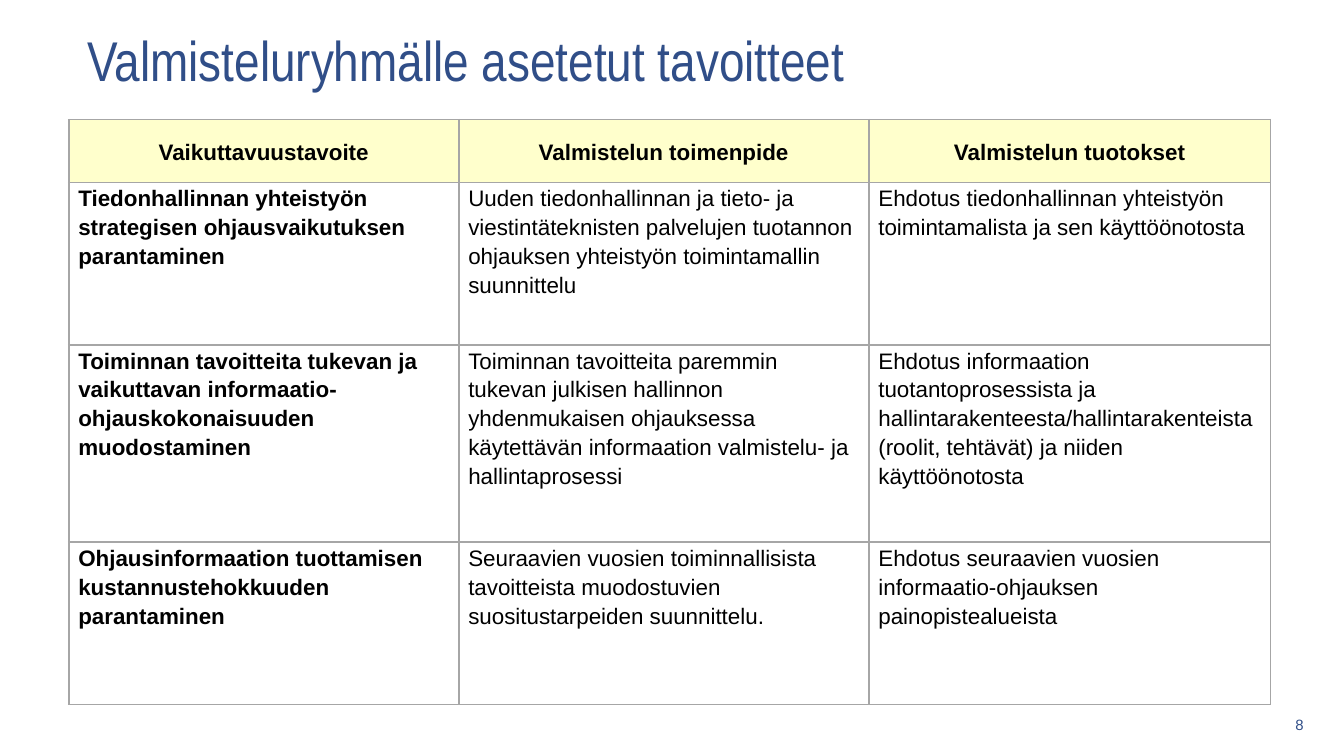
from lxml import etree
from pptx import Presentation
from pptx.dml.color import RGBColor
from pptx.enum.text import MSO_ANCHOR, MSO_AUTO_SIZE, PP_ALIGN
from pptx.oxml.ns import qn
from pptx.util import Cm, Pt

MIDDLE, TOP = MSO_ANCHOR.MIDDLE, MSO_ANCHOR.TOP
LEFT, CENTER, RIGHT = PP_ALIGN.LEFT, PP_ALIGN.CENTER, PP_ALIGN.RIGHT
NO_AUTOFIT = MSO_AUTO_SIZE.NONE
TITLE_ONLY = 5

# Content
TITLE = "Valmisteluryhmälle asetetut tavoitteet"
PAGE_NUMBER = "8"
GOALS = [
    ("Vaikuttavuustavoite", "Valmistelun toimenpide", "Valmistelun tuotokset"),
    ("Tiedonhallinnan yhteistyön strategisen ohjausvaikutuksen parantaminen",
     "Uuden tiedonhallinnan ja tieto- ja viestintäteknisten palvelujen "
     "tuotannon ohjauksen yhteistyön toimintamallin suunnittelu",
     "Ehdotus tiedonhallinnan yhteistyön toimintamalista ja sen käyttöönotosta"),
    ("Toiminnan tavoitteita tukevan ja vaikuttavan "
     "informaatio-ohjauskokonaisuuden muodostaminen",
     "Toiminnan tavoitteita paremmin tukevan julkisen hallinnon yhdenmukaisen "
     "ohjauksessa käytettävän informaation valmistelu- ja hallintaprosessi",
     "Ehdotus informaation tuotantoprosessista ja "
     "hallintarakenteesta/hallintarakenteista (roolit, tehtävät) ja niiden "
     "käyttöönotosta"),
    ("Ohjausinformaation tuottamisen kustannustehokkuuden parantaminen",
     "Seuraavien vuosien toiminnallisista tavoitteista muodostuvien "
     "suositustarpeiden suunnittelu.",
     "Ehdotus seuraavien vuosien informaatio-ohjauksen painopistealueista"),
]
COLUMN_WIDTHS = [7.37, 7.75, 7.59]
ROW_HEIGHTS = [1.19, 3.07, 3.73, 3.07]
COLORS = {"blue": "304E88", "text": "000000", "header": "FFFFCC",
          "body": "FFFFFF", "border": "A6A6A6"}


def format_text(paragraph, font_name, size, color, alignment, bold=False):
    paragraph.alignment = alignment
    for run in paragraph.runs:
        run.font.name = font_name
        run.font.size = Pt(size)
        run.font.bold = bold
        run.font.color.rgb = RGBColor.from_string(COLORS[color])


def add_borders(cell, color, width):
    properties = cell._tc.get_or_add_tcPr()
    for index, side in enumerate(("lnL", "lnR", "lnT", "lnB")):
        line = etree.Element(qn(f"a:{side}"), w=str(Pt(width)))
        fill = etree.SubElement(line, qn("a:solidFill"))
        etree.SubElement(fill, qn("a:srgbClr"), val=COLORS[color])
        properties.insert(index, line)


def fill_cell(cell, text, is_header, bold):
    cell.fill.solid()
    cell.fill.fore_color.rgb = RGBColor.from_string(
        COLORS["header" if is_header else "body"])
    cell.margin_left = cell.margin_right = Cm(0.18)
    cell.margin_top = cell.margin_bottom = 0
    cell.vertical_anchor = MIDDLE if is_header else TOP
    cell.text_frame.text = text
    paragraph = cell.text_frame.paragraphs[0]
    paragraph.line_spacing = 1.15
    paragraph.space_before = Pt(2 if is_header else 0)
    paragraph.space_after = Pt(2)
    format_text(paragraph, "Arial", 12, "text",
                CENTER if is_header else LEFT, bold)
    add_borders(cell, "border", 1)


presentation = Presentation()
presentation.slide_width, presentation.slide_height = Cm(25.4), Cm(14.29)
slide = presentation.slides.add_slide(presentation.slide_layouts[TITLE_ONLY])

# Title
title = slide.shapes.title
title.left, title.top, title.width, title.height = (
    Cm(1.4), Cm(0.3), Cm(20.5), Cm(1.65))
title.text_frame.text = TITLE
title.text_frame.auto_size = NO_AUTOFIT
title.text_frame.vertical_anchor = MIDDLE
format_text(title.text_frame.paragraphs[0], "Arial Narrow", 30, "blue", LEFT)

# Table of goals
table = slide.shapes.add_table(
    len(ROW_HEIGHTS), len(COLUMN_WIDTHS), Cm(1.3), Cm(2.26),
    Cm(sum(COLUMN_WIDTHS)), Cm(sum(ROW_HEIGHTS))).table
for column, width in zip(table.columns, COLUMN_WIDTHS):
    column.width = Cm(width)
for row, height in zip(table.rows, ROW_HEIGHTS):
    row.height = Cm(height)
for row_index, goal in enumerate(GOALS):
    for column_index, text in enumerate(goal):
        is_header = row_index == 0
        fill_cell(table.cell(row_index, column_index), text, is_header,
                  bold=is_header or column_index == 0)

# Page number
number_box = slide.shapes.add_textbox(Cm(23.57), Cm(13.39), Cm(1.32), Cm(0.61))
number_box.text_frame.word_wrap = True
number_box.text_frame.vertical_anchor = MIDDLE
number_box.text_frame.text = PAGE_NUMBER
format_text(number_box.text_frame.paragraphs[0], "Arial", 8, "blue", RIGHT)

presentation.save("out.pptx")
